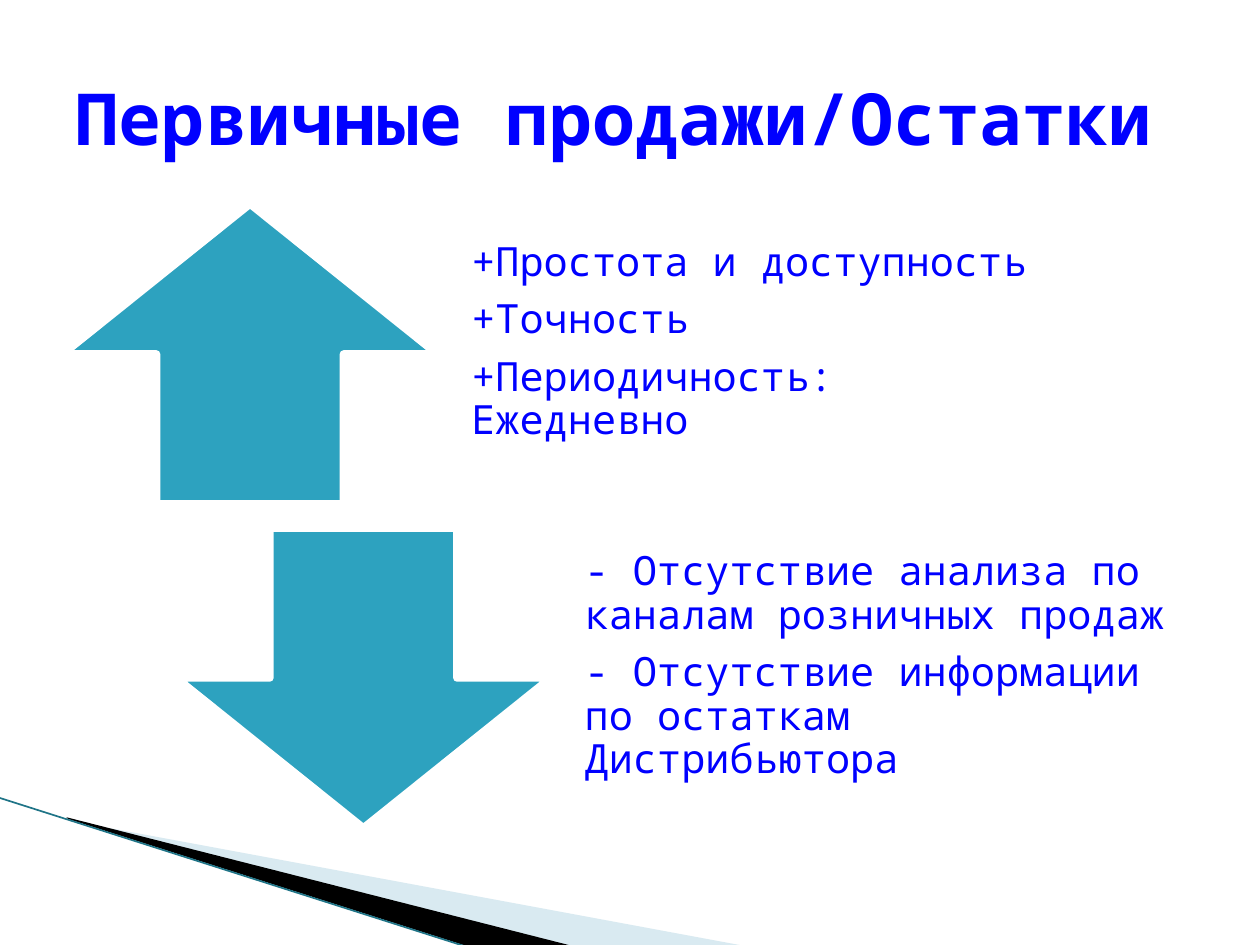
from lxml.etree import SubElement
from pptx import Presentation
from pptx.dml.color import RGBColor
from pptx.enum.shapes import MSO_CONNECTOR, MSO_SHAPE
from pptx.enum.text import MSO_ANCHOR, MSO_AUTO_SIZE, PP_ALIGN
from pptx.oxml.ns import qn
from pptx.util import Pt


def rgb(hex_color):
    return RGBColor.from_string(hex_color)


def write(tf, text, size=23, bold=False, color="0000FF", font="Noto Sans Mono",
          line=1.0, gap=0):
    """Fill a text frame with one left-aligned, unbulleted paragraph per line."""
    tf.word_wrap = True
    tf.auto_size = MSO_AUTO_SIZE.NONE
    tf.vertical_anchor = MSO_ANCHOR.MIDDLE
    tf.text = text
    for p in tf.paragraphs:
        pPr = p._p.get_or_add_pPr()
        pPr.set("marL", "0")
        pPr.set("indent", "0")
        SubElement(pPr, qn("a:buNone"))
        p.alignment = PP_ALIGN.LEFT
        p.line_spacing = line
        p.space_before = Pt(0)
        p.space_after = Pt(gap)
        f = p.runs[0].font
        f.name, f.size, f.bold = font, Pt(size), bold
        f.color.rgb = rgb(color)


prs = Presentation()
prs.slide_width, prs.slide_height = Pt(720), Pt(540)
s = prs.slides.add_slide(prs.slide_layouts[3])

# Corner decoration
wedges = [
    ("A0CBDC", 40, [(39.6, 468.7), (428.4, 540.7), (328.3, 540.7), (39.6, 468)]),
    ("000000", 100, [(38.2, 467.3), (329, 540.7), (267.8, 541.4), (38.9, 468)]),
]
for color, opacity, points in wedges:
    builder = s.shapes.build_freeform(*points[0], scale=Pt(1))
    builder.add_line_segments(points[1:], close=True)
    sp = builder.convert_to_shape()
    sp.shadow.inherit = False
    sp.fill.solid()
    sp.fill.fore_color.rgb = rgb(color)
    sp.line.fill.background()
    if opacity < 100:
        clr = sp.fill._xPr.find(qn("a:solidFill"))[0]
        SubElement(clr, qn("a:alpha")).set("val", str(opacity * 1000))

edge = s.shapes.add_connector(MSO_CONNECTOR.STRAIGHT, Pt(-0.7), Pt(455.8), Pt(267.8), Pt(541.4))
edge.line.color.rgb = rgb("1F7487")
edge.line.width = Pt(0.95)
SubElement(edge._element.spPr, qn("a:effectLst"))

# Title
title = s.shapes.title
title.left, title.top, title.width, title.height = Pt(36), Pt(21.6), Pt(648), Pt(90)
write(title.text_frame, "Первичные продажи/Остатки", size=41, bold=True)

# Advantages and drawbacks, each an arrow with a list beside it
rows = [
    (MSO_SHAPE.UP_ARROW, 36, 116.6, 256.3, [
        "+Простота и доступность",
        "+Точность",
        "+Периодичность: Ежедневно",
    ]),
    (MSO_SHAPE.DOWN_ARROW, 100.8, 301.7, 321.1, [
        "- Отсутствие анализа по каналам розничных продаж",
        "- Отсутствие информации по остаткам Дистрибьютора",
    ]),
]
for (kind, arrow_x, y, list_x, items), body in zip(rows, list(s.placeholders)[1:]):
    arrow = s.shapes.add_shape(kind, Pt(arrow_x), Pt(y), Pt(213.8), Pt(171.4))
    arrow.shadow.inherit = False
    arrow.fill.solid()
    arrow.fill.fore_color.rgb = rgb("2DA2BF")
    arrow.line.color.rgb = rgb("FFFFFF")
    arrow.line.width = Pt(4.33)

    body.left, body.top, body.width, body.height = Pt(list_x), Pt(y), Pt(362.9), Pt(171.4)
    tf = body.text_frame
    tf.margin_left = tf.margin_right = tf.margin_bottom = Pt(13)
    tf.margin_top = 0
    write(tf, "\n".join(items), line=0.9, gap=8)

prs.save("out.pptx")
